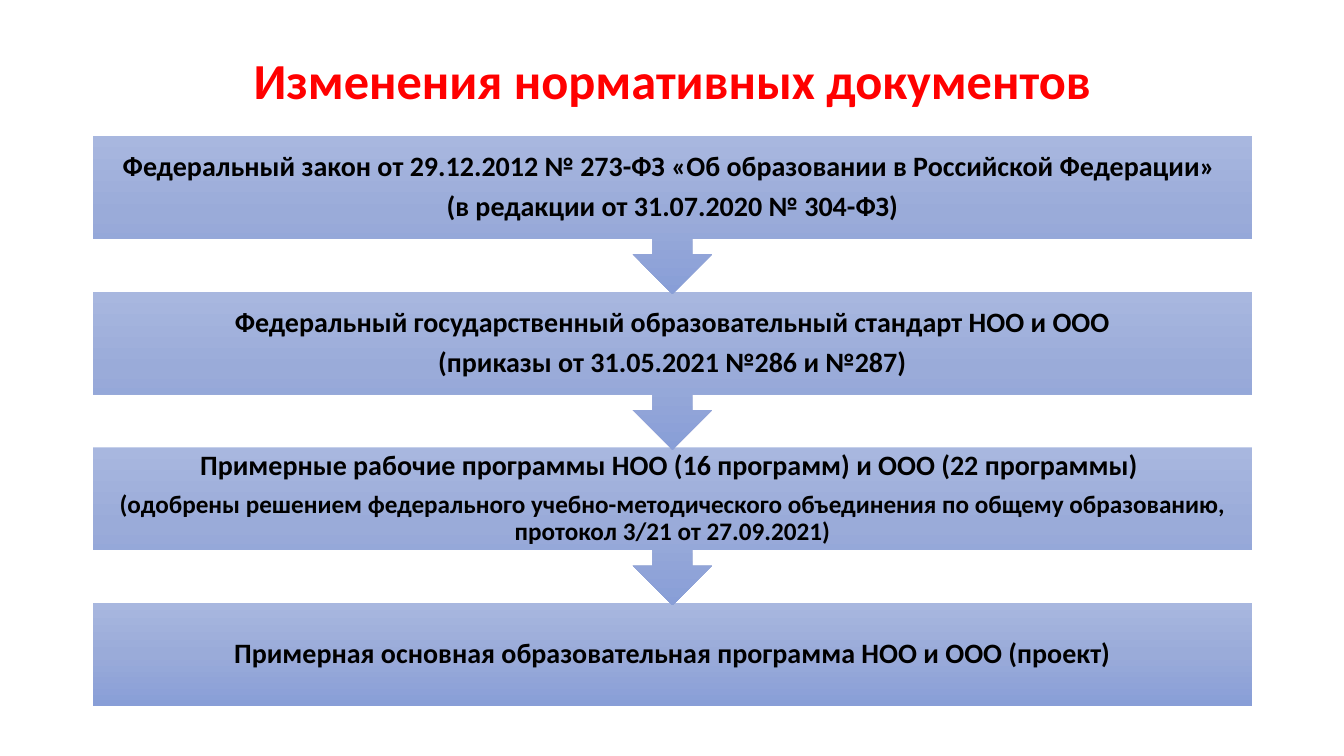
from copy import deepcopy
from dataclasses import dataclass

from pptx import Presentation
from pptx.dml.color import RGBColor
from pptx.enum.shapes import MSO_SHAPE
from pptx.enum.text import MSO_ANCHOR, PP_ALIGN
from pptx.oxml.ns import qn
from pptx.util import Emu, Pt

PX = 914400 / 100.8


@dataclass(frozen=True)
class Theme:
    font: str = "Calibri"
    title_color: str = "FF0000"
    text_color: str = "000000"
    gradient: tuple = ("A8B7DF", "9AABD9", "889ED7")
    title_size: int = 36
    body_size: int = 20
    note_size: int = 18


THEME = Theme()

TITLE = "Изменения нормативных документов"
DOCUMENTS = [
    [
        ("Федеральный закон от 29.12.2012 № 273-ФЗ «Об образовании в Российской Федерации» ", THEME.body_size),
        ("(в редакции от 31.07.2020 № 304-ФЗ)", THEME.body_size),
    ],
    [
        ("Федеральный государственный образовательный стандарт НОО и ООО", THEME.body_size),
        ("(приказы от 31.05.2021 №286 и №287)", THEME.body_size),
    ],
    [
        ("Примерные рабочие программы НОО (16 программ) и ООО (22 программы) ", THEME.body_size),
        (
            "(одобрены решением федерального учебно-методического объединения "
            "по общему образованию, протокол 3/21 от 27.09.2021)",
            THEME.note_size,
        ),
    ],
    [("Примерная основная образовательная программа НОО и ООО (проект)", THEME.body_size)],
]


def px(length):
    return Emu(round(length * PX))


def write_lines(shape, lines, color, side_margin):
    frame = shape.text_frame
    frame.word_wrap = True
    frame.vertical_anchor = MSO_ANCHOR.MIDDLE
    frame.margin_left = frame.margin_right = px(side_margin)
    frame.margin_top = frame.margin_bottom = 0
    frame.text = "\n".join(text for text, size in lines)
    for para, (text, size) in zip(frame.paragraphs, lines):
        para.alignment = PP_ALIGN.CENTER
        para.line_spacing = 0.9
        para.space_after = Pt(7) if para is not frame.paragraphs[-1] else Pt(0)
        for span in para.runs:
            span.font.name = THEME.font
            span.font.size = Pt(size)
            span.font.bold = True
            span.font.color.rgb = RGBColor.from_string(color)


def fill_gradient(shape):
    shape.fill.gradient()
    shape.fill.gradient_angle = 270
    stop_list = shape.fill._xPr.find(".//" + qn("a:gsLst"))
    stop_list.insert(1, deepcopy(stop_list[0]))
    for index, (stop, color) in enumerate(zip(shape.fill.gradient_stops, THEME.gradient)):
        stop.position = index / 2
        stop.color.rgb = RGBColor.from_string(color)


def add_title(page, left, top, width, height):
    box = page.shapes.add_textbox(px(left), px(top), px(width), px(height))
    write_lines(box, [(TITLE, THEME.title_size)], THEME.title_color, 10)


def add_document_chain(page, left, top, width, height):
    body_height = 103
    callout_height = 158
    last = len(DOCUMENTS) - 1
    pitch = (height - body_height) / last
    for index in range(last, -1, -1):
        kind = MSO_SHAPE.RECTANGLE if index == last else MSO_SHAPE.DOWN_ARROW_CALLOUT
        step_height = body_height if index == last else callout_height
        step = page.shapes.add_shape(
            kind, px(left), px(top + index * pitch), px(width), px(step_height)
        )
        step.shadow.inherit = False
        step.line.fill.background()
        fill_gradient(step)
        write_lines(step, DOCUMENTS[index], THEME.text_color, 16)


def main():
    deck = Presentation()
    deck.slide_width = px(1344)
    deck.slide_height = px(756)
    page = deck.slides.add_slide(deck.slide_layouts[6])
    add_title(page, 93, 38, 1159, 90)
    add_document_chain(page, 93, 136, 1159, 570)
    deck.save("out.pptx")


if __name__ == "__main__":
    main()
